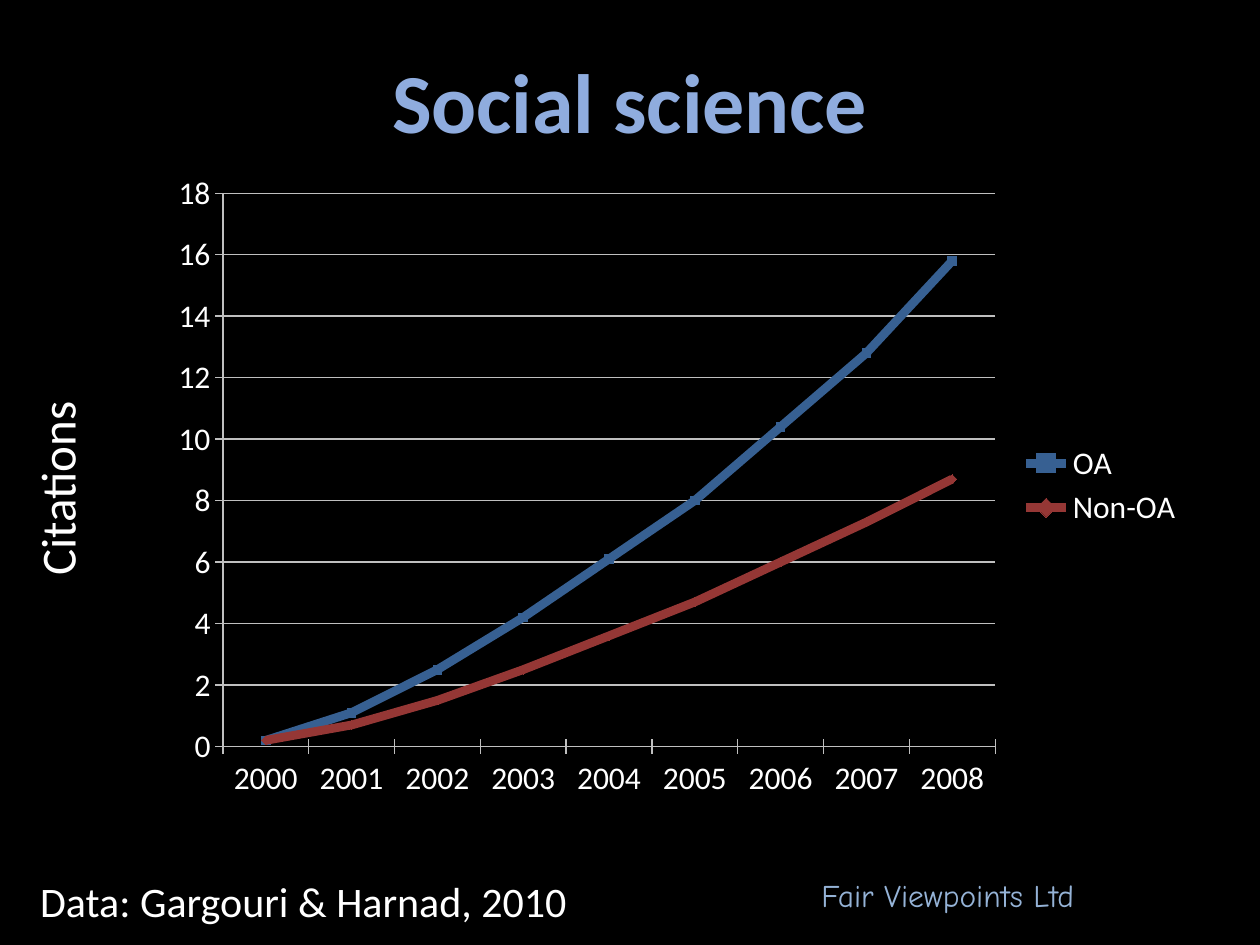
from pptx import Presentation
from pptx.chart.data import CategoryChartData as Data
from pptx.dml.color import RGBColor as Rgb
from pptx.enum.chart import (
    XL_CHART_TYPE as Kind,
    XL_LEGEND_POSITION as Side,
    XL_MARKER_STYLE as Mark,
    XL_TICK_MARK as Tick,
)
from pptx.enum.text import MSO_ANCHOR as Anchor, PP_ALIGN as Align
from pptx.util import Cm, Pt

HUES = {
    "back": "000000",
    "text": "FFFFFF",
    "title": "8FACDE",
    "firm": "95B3D7",
    "grid": "BFBFBF",
    "open": "376092",
    "closed": "953735",
}
YEARS = [str(year) for year in range(2000, 2009)]
LINES = [
    ("OA", [0.2, 1.1, 2.5, 4.2, 6.1, 8, 10.4, 12.8, 15.8], "open", Mark.SQUARE),
    ("Non-OA", [0.2, 0.7, 1.5, 2.5, 3.6, 4.7, 6, 7.3, 8.7], "closed", Mark.DIAMOND),
]


def hue(name):
    return Rgb.from_string(HUES[name])


def style(font, size, color, face="Calibri", bold=False):
    font.size, font.name, font.bold = Pt(size), face, bold
    font.color.rgb = hue(color)


def add_title(slide, text):
    title = slide.shapes.title
    title.left, title.top = Cm(1.27), Cm(0.76)
    title.width, title.height = Cm(22.86), Cm(2.49)
    frame = title.text_frame
    frame.text = text
    frame.vertical_anchor = Anchor.MIDDLE
    para = frame.paragraphs[0]
    para.alignment = Align.CENTER
    style(para.font, 48, "title", bold=True)


def add_label(slide, text, place, size, color="text", face="Calibri"):
    frame = slide.shapes.add_textbox(*map(Cm, place)).text_frame
    frame.word_wrap = True
    frame.text = text
    style(frame.paragraphs[0].font, size, color, face)
    return frame


def add_side(slide, text, place, size):
    frame = add_label(slide, text, place, size)
    frame.paragraphs[0].alignment = Align.CENTER
    frame._txBody.bodyPr.set("vert", "vert270")


def style_axis(axis):
    axis.major_tick_mark = Tick.CROSS
    axis.minor_tick_mark = Tick.NONE
    axis.format.line.color.rgb = hue("grid")
    axis.format.line.width = Pt(0.75)


def add_lines(slide, place):
    data = Data()
    data.categories = YEARS
    for name, vals, _, _ in LINES:
        data.add_series(name, vals)
    chart = slide.shapes.add_chart(Kind.LINE_MARKERS, *map(Cm, place), data).chart
    chart.has_title = False
    style(chart.font, 18, "text")
    chart.has_legend = True
    chart.legend.position = Side.RIGHT
    chart.legend.include_in_layout = False
    chart.plots[0].vary_by_categories = False

    axis = chart.value_axis
    axis.minimum_scale, axis.maximum_scale, axis.major_unit = 0, 18, 2
    axis.tick_labels.number_format = "0"
    axis.tick_labels.number_format_is_linked = False
    axis.has_major_gridlines = True
    grid = axis.major_gridlines.format.line
    grid.color.rgb, grid.width = hue("grid"), Pt(0.75)
    for axis in (chart.category_axis, chart.value_axis):
        style_axis(axis)

    for series, (_, _, color, mark) in zip(chart.plots[0].series, LINES):
        series.smooth = False
        series.format.line.color.rgb = hue(color)
        series.format.line.width = Pt(5)
        series.marker.style, series.marker.size = mark, 5
        shade = series.marker.format
        shade.fill.solid()
        shade.fill.fore_color.rgb = hue(color)
        shade.line.color.rgb = hue(color)


def main():
    deck = Presentation()
    deck.slide_width, deck.slide_height = Cm(25.4), Cm(19.05)
    slide = deck.slides.add_slide(deck.slide_layouts[5])
    fill = slide.background.fill
    fill.solid()
    fill.fore_color.rgb = hue("back")

    add_title(slide, "Social science")
    add_lines(slide, (3.18, 3.25, 20.93, 13.08))
    add_side(slide, "Citations", (0.41, 5.87, 1.7, 7.95), 28)
    add_label(slide, "Fair Viewpoints Ltd", (16.31, 17.53, 7.8, 1.02), 18,
              "firm", "Comic Neue")
    add_label(slide, "Data: Gargouri & Harnad, 2010", (0.56, 17.53, 12.14, 1.27), 24)
    deck.save("out.pptx")


if __name__ == "__main__":
    main()
